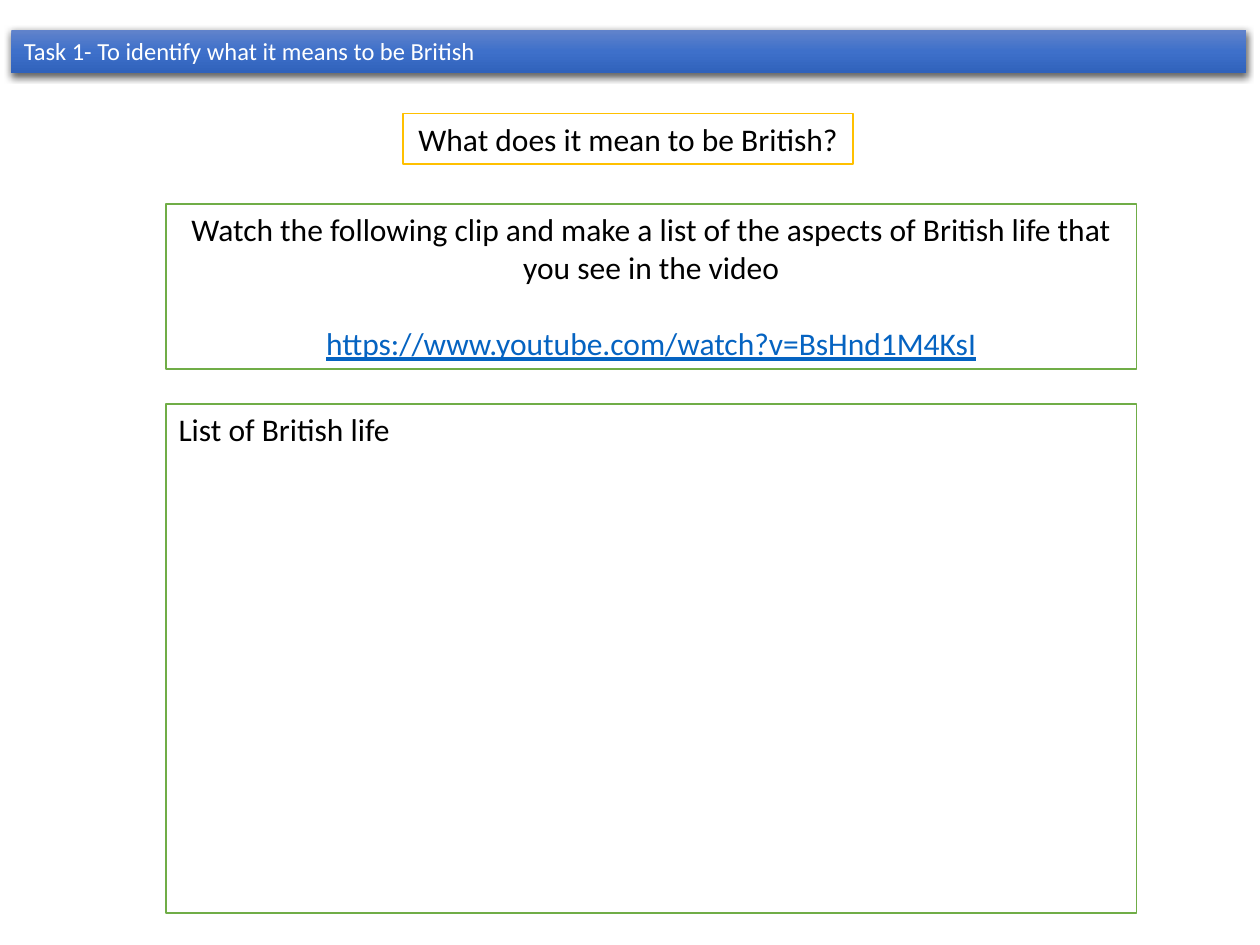
"""Build the Task 1 slide on what it means to be British."""
import copy
import lxml.etree
import pptx
import pptx.dml.color
import pptx.enum.shapes
import pptx.enum.text
import pptx.oxml.ns
import pptx.util

Cm, Pt = pptx.util.Cm, pptx.util.Pt
qn = pptx.oxml.ns.qn
LEFT = pptx.enum.text.PP_ALIGN.LEFT
MID = pptx.enum.text.PP_ALIGN.CENTER

COL, WIDE = 3.35, 19.56
GREEN, GOLD = "70AD47", "FFC000"
LINK = "https://www.youtube.com/watch?v=BsHnd1M4KsI"
TASK = ("Task 1- To identify what it means to be British",)
CLIP = ("Watch the following clip and make a list of the aspects of British life that you see in the video", LINK)
ASK = ("What does it mean to be British?",)
LIST = ("List of British life",)
BAR = (0.23, 0.61, 24.89, 0.86)
STOPS = ((0, "6183CB"), (0.5, "3E70CA"), (1, "3062BB"))
BOXES = (
    (CLIP, (COL, 4.11, WIDE, 3.33), GREEN, MID, True),
    (ASK, (8.13, 2.29, 9.07, 1.02), GOLD, MID, False),
    (LIST, (COL, 8.15, WIDE, 10.26), GREEN, LEFT, True),
)


def rgb(code):
    return pptx.dml.color.RGBColor.from_string(code)


def add_box(slide, lines, place, size, ink, align=LEFT, wrap=True):
    box = slide.shapes.add_shape(
        pptx.enum.shapes.MSO_SHAPE.RECTANGLE, *map(Cm, place))
    box.shadow.inherit = False
    frame = box.text_frame
    frame.word_wrap = wrap
    frame.vertical_anchor = pptx.enum.text.MSO_ANCHOR.TOP
    frame.text = "\n".join(lines)
    for para in frame.paragraphs:
        para.alignment = align
        for run in para.runs:
            font = run.font
            font.name, font.size = "Calibri", Pt(size)
            font.color.rgb = rgb(ink)
            if run.text == LINK:
                para.space_before = Pt(22)
                font.underline = True
                font.color.rgb = rgb("0563C1")
    return box


def add_bar(slide):
    bar = add_box(slide, TASK, BAR, 14, "FFFFFF")
    bar.line.fill.background()
    bar.fill.gradient()
    bar.fill.gradient_angle = 270
    props = bar._element.spPr
    stops = props.find(qn("a:gradFill")).find(qn("a:gsLst"))
    stops.append(copy.deepcopy(stops[0]))
    for stop, (pos, code) in zip(bar.fill.gradient_stops, STOPS):
        stop.position = pos
        stop.color.rgb = rgb(code)
    shade = lxml.etree.SubElement(
        props.find(qn("a:effectLst")), qn("a:outerShdw"),
        blurRad=str(Pt(4.5)), dist=str(Pt(1.5)), dir="5400000", rotWithShape="0")
    tint = lxml.etree.SubElement(shade, qn("a:srgbClr"), val="000000")
    lxml.etree.SubElement(tint, qn("a:alpha"), val="63000")


def main():
    deck = pptx.Presentation()
    deck.slide_width, deck.slide_height = Cm(25.4), Cm(19.05)
    slide = deck.slides.add_slide(deck.slide_layouts[6])
    add_bar(slide)
    for lines, place, edge, align, wrap in BOXES:
        box = add_box(slide, lines, place, 18, "000000", align, wrap)
        box.fill.solid()
        box.fill.fore_color.rgb = rgb("FFFFFF")
        box.line.color.rgb = rgb(edge)
        box.line.width = Pt(1)
    deck.save("out.pptx")


if __name__ == "__main__":
    main()
